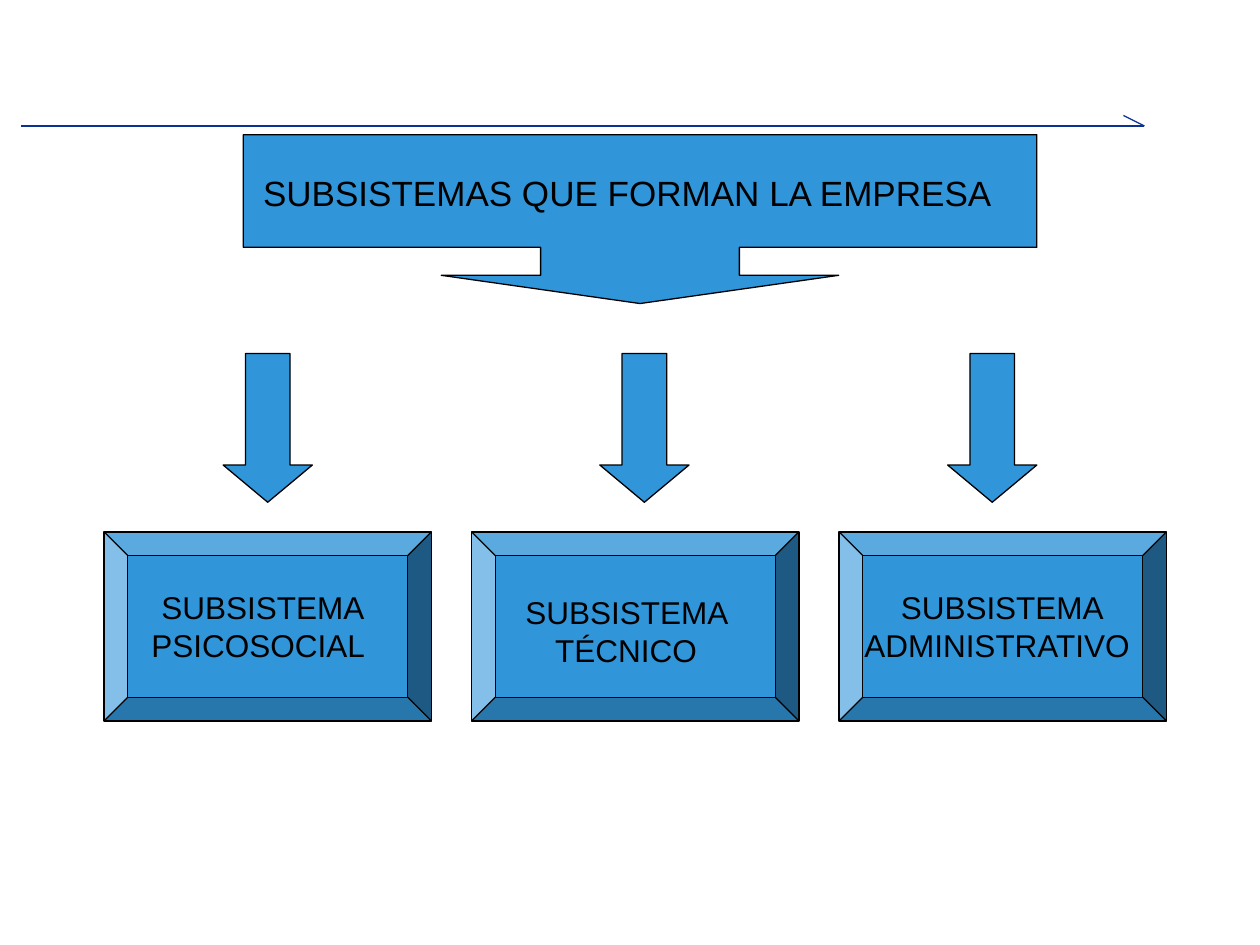
from lxml import etree
from pptx import Presentation
from pptx.dml.color import RGBColor
from pptx.enum import shapes, text
from pptx.oxml.ns import qn
from pptx.util import Pt

COLORS = {"fill": "3195D9", "ink": "000000", "rule": "0B3191"}
FONT = "Arial"

HEADING = "SUBSISTEMAS QUE FORMAN LA EMPRESA "
# label, label box (left, top, width), left of the arrow above
SUBSYSTEMS = [
    ("SUBSISTEMA PSICOSOCIAL ", (70.5, 332.5, 158.5), 127.5),
    ("SUBSISTEMA TÉCNICO", (281, 335.5, 153.5), 342.75),
    ("SUBSISTEMA ADMINISTRATIVO ", (484.5, 332.5, 175.5), 541.5),
]
RULE_LINES = [((12, 72), (654, 72)), ((642, 66), (654, 72))]
PANEL_LEFT, PANEL_PITCH = 59.5, 210


def color(name):
    return RGBColor.from_string(COLORS[name])


def add_block(kind, left, top, width, height, adjustments):
    block = page.shapes.add_shape(kind, Pt(left), Pt(top), Pt(width), Pt(height))
    for index, value in enumerate(adjustments):
        block.adjustments[index] = value
    block.shadow.inherit = False
    block.fill.solid()
    block.fill.fore_color.rgb = color("fill")
    block.line.color.rgb = color("ink")
    block.line.width = Pt(0.75)


def write(box, words, size, wrap):
    frame = box.text_frame
    frame.text = words
    frame.word_wrap = wrap
    frame.auto_size = text.MSO_AUTO_SIZE.NONE
    frame.vertical_anchor = text.MSO_ANCHOR.MIDDLE
    para = frame.paragraphs[0]
    para.alignment = text.PP_ALIGN.CENTER
    para.line_spacing = 1.0
    font = para.runs[0].font
    font.name, font.size, font.color.rgb = FONT, Pt(size), color("ink")


deck = Presentation()
deck.slide_width, deck.slide_height = Pt(720), Pt(540)
page = deck.slides.add_slide(deck.slide_layouts[5])

# Rule with a half arrowhead
for start, end in RULE_LINES:
    rule = page.shapes.add_connector(
        shapes.MSO_CONNECTOR.STRAIGHT, *map(Pt, start + end))
    rule.line.color.rgb = color("rule")
    rule.line.width = Pt(0.75)
    etree.SubElement(rule._element.spPr, qn("a:effectLst"))

# Heading callout, with the title in front of it
add_block(shapes.MSO_SHAPE.DOWN_ARROW_CALLOUT, 139, 77, 453.5, 96.5,
          (1.177, 1.177, 0.167, 0.667))
title = page.shapes.title
title.left, title.top, title.width, title.height = map(Pt, (139, 94.5, 443.5, 31))
write(title, HEADING, 20, False)
page.shapes._spTree.append(title._element)

# Subsystems: arrow, bevelled panel and label
for column, (label, (left, top, width), arrow_left) in enumerate(SUBSYSTEMS):
    add_block(shapes.MSO_SHAPE.DOWN_ARROW, arrow_left, 202, 51, 85, (0.5, 0.417))
    add_block(shapes.MSO_SHAPE.BEVEL, PANEL_LEFT + column * PANEL_PITCH, 304,
              187, 108, (0.125,))
    box = page.shapes.add_textbox(Pt(left), Pt(top), Pt(width), Pt(50.5))
    write(box, label, 18, True)

deck.save("out.pptx")
